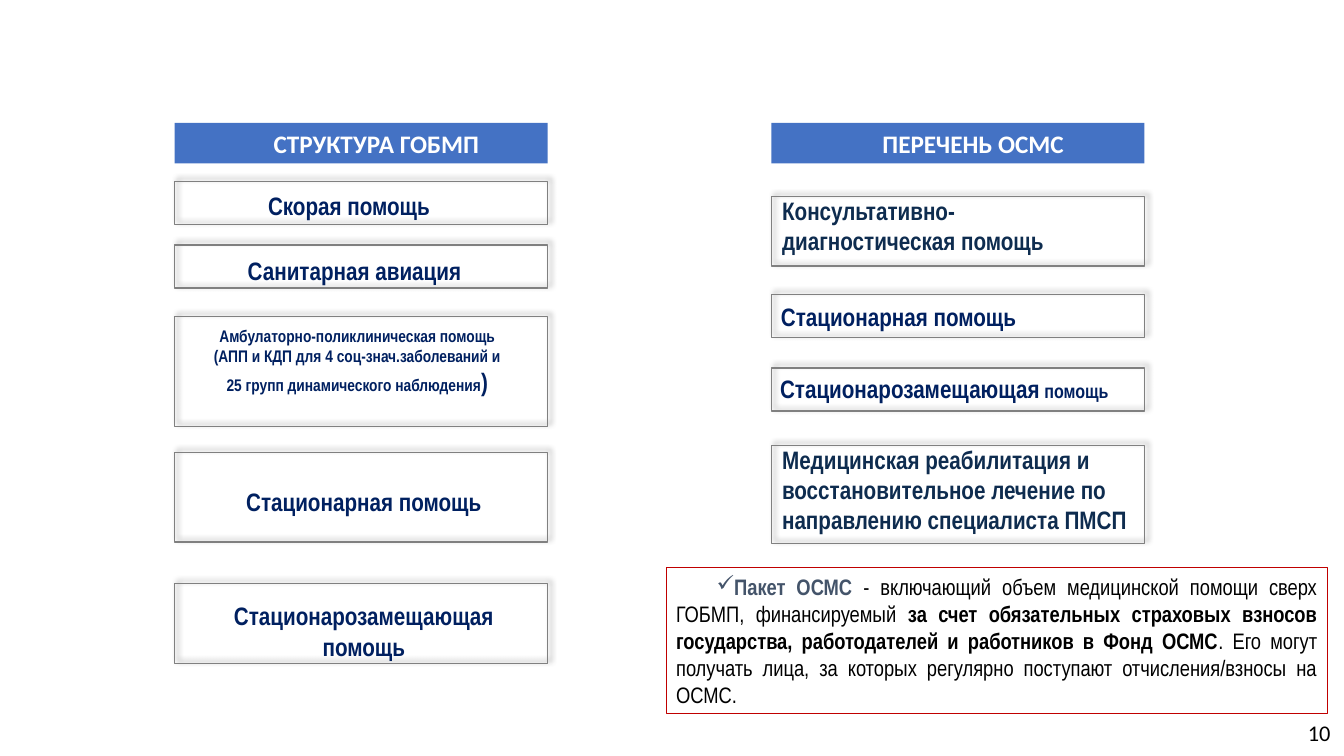
from lxml.etree import SubElement
from pptx import Presentation
from pptx.dml.color import RGBColor
from pptx.enum.shapes import MSO_SHAPE as Preset
from pptx.enum.text import MSO_ANCHOR as Anchor, PP_ALIGN as Align
from pptx.oxml.ns import qn
from pptx.util import Cm, Pt

NARROW, CALIBRI = "Arial Narrow", "Calibri"
NAVY, DARK_BLUE, SLATE = "002060", "0E2C4F", "44546A"
BLUE, GRAY, RED = "4472C4", "808080", "C00000"
BLACK, WHITE = "000000", "FFFFFF"

GOBMP_LEFT, OSMS_LEFT, CARD_WIDTH = 4.4, 19.44, 9.4

# Card top and height, label box, label paragraphs as (text, size) runs
GOBMP_CARDS = [
    (4.57, 1.09, (6.05, 4.67, 5.49, 1.02), [[("Скорая помощь", 18)]]),
    (6.17, 1.09, (5.94, 6.3, 5.99, 1.02), [[("Санитарная авиация", 18)]]),
    (7.98, 2.77, (5.08, 8.09, 7.85, 2.03), [
        [("Амбулаторно-поликлиническая помощь", 12)],
        [("(АПП и КДП для 4 соц-знач.заболеваний и 25 групп "
          "динамического наблюдения", 12), (")", 18)]]),
    (11.4, 2.26, (5.51, 12.12, 7.32, 1.02), [[("Стационарная помощь", 18)]]),
    (14.71, 2.01, (5.51, 15.01, 7.32, 1.78),
     [[("Стационарозамещающая помощь", 18)]]),
]
# The same, with alignment and colour of the label
OSMS_CARDS = [
    (4.95, 1.75, (19.46, 4.8, 8.26, 1.8),
     [[("Консультативно-диагностическая помощь", 18)]], Align.LEFT, DARK_BLUE),
    (7.42, 1.09, (19.43, 7.47, 6.68, 1.02),
     [[("Стационарная помощь", 18)]], Align.LEFT, NAVY),
    (9.27, 1.09, (18.95, 9.27, 9.7, 1.02),
     [[("Стационарозамещающая", 18), (" помощь", 14)]], Align.CENTER, NAVY),
    (11.23, 2.46, (19.46, 11.07, 10.01, 2.57),
     [[("Медицинская реабилитация и восстановительное лечение по "
        "направлению специалиста ПМСП", 18)]], Align.LEFT, DARK_BLUE),
]
OSMS_NOTE = [
    ("Пакет ОСМС ", True, SLATE),
    ("- включающий объем медицинской помощи сверх ГОБМП, финансируемый ",
     False, BLACK),
    ("за счет обязательных страховых взносов государства, работодателей "
     "и работников в Фонд ОСМС", True, BLACK),
    (". Его могут получать лица, за которых регулярно поступают "
     "отчисления/взносы на ОСМС.", False, BLACK),
]


def color(hex_code):
    return RGBColor.from_string(hex_code)


def style(font, name, size=None, hex_code=None, bold=None):
    font.name = name
    font.bold = bold
    if size:
        font.size = Pt(size)
    if hex_code:
        font.color.rgb = color(hex_code)


def add_rectangle(slide, box, fill=None, line=None, line_width=1):
    rectangle = slide.shapes.add_shape(Preset.RECTANGLE, *map(Cm, box))
    rectangle.shadow.inherit = False
    if fill:
        rectangle.fill.solid()
        rectangle.fill.fore_color.rgb = color(fill)
    else:
        rectangle.fill.background()
    if line:
        rectangle.line.color.rgb = color(line)
        rectangle.line.width = Pt(line_width)
    else:
        rectangle.line.fill.background()
    return rectangle


def add_soft_shadow(shape):
    """Cast a 40 % black shadow to the upper right."""
    effects = shape._element.spPr.find(qn("a:effectLst"))
    shadow = SubElement(effects, qn("a:outerShdw"), blurRad=str(Pt(4)),
                        dist=str(Pt(3)), dir=str(315 * 60000),
                        algn="bl", rotWithShape="0")
    tint = SubElement(shadow, qn("a:srgbClr"), val=BLACK)
    SubElement(tint, qn("a:alpha"), val="40000")


def add_label(slide, box, paragraphs, align=Align.CENTER, hex_code=NAVY,
              font_name=NARROW, bold=True):
    frame = slide.shapes.add_textbox(*map(Cm, box)).text_frame
    frame.word_wrap = True
    for index, runs in enumerate(paragraphs):
        paragraph = frame.add_paragraph() if index else frame.paragraphs[0]
        paragraph.alignment = align
        style(paragraph.font, font_name, hex_code=hex_code, bold=bold)
        for text, size in runs:
            run = paragraph.add_run()
            run.text = text
            run.font.size = Pt(size)
    return frame


def add_card(slide, left, top, height, label_box, paragraphs, *label_style):
    add_soft_shadow(
        add_rectangle(slide, (left, top, CARD_WIDTH, height), line=GRAY))
    add_label(slide, label_box, paragraphs, *label_style)


def add_header(slide, left, title):
    frame = add_rectangle(slide, (left, 3.1, CARD_WIDTH, 1.02),
                          fill=BLUE).text_frame
    frame.margin_left = Cm(1.02)
    frame.vertical_anchor = Anchor.MIDDLE
    heading = frame.paragraphs[0]
    heading.text = title
    heading.alignment = Align.CENTER
    style(heading.font, CALIBRI, 18, WHITE, True)


def add_note(slide, box, runs):
    frame = add_rectangle(slide, box, line=RED, line_width=0.75).text_frame
    frame.word_wrap = True
    frame.vertical_anchor = Anchor.MIDDLE
    paragraph = frame.paragraphs[0]
    paragraph.alignment = Align.JUSTIFY
    paragraph.space_after = Pt(6)
    properties = paragraph._p.get_or_add_pPr()
    properties.set("marL", "0")
    properties.set("indent", str(Cm(1.02)))
    SubElement(properties, qn("a:buChar"), char="✓")
    style(paragraph.font, NARROW, 16)
    for text, bold, hex_code in runs:
        run = paragraph.add_run()
        run.text = text
        run.font.bold = bold
        run.font.color.rgb = color(hex_code)


def main():
    deck = Presentation()
    deck.slide_width, deck.slide_height = Cm(33.87), Cm(19.05)
    slide = deck.slides.add_slide(deck.slide_layouts[6])

    add_header(slide, GOBMP_LEFT, "СТРУКТУРА ГОБМП")
    add_header(slide, OSMS_LEFT, "ПЕРЕЧЕНЬ ОСМС")
    for card in GOBMP_CARDS:
        add_card(slide, GOBMP_LEFT, *card)
    for card in OSMS_CARDS:
        add_card(slide, OSMS_LEFT, *card)
    add_note(slide, (16.79, 14.3, 16.66, 3.68), OSMS_NOTE)
    page_number = add_label(slide, (26.16, 17.96, 7.62, 1.02), [[("10", 16)]],
                            Align.RIGHT, BLACK, CALIBRI, False)
    page_number.vertical_anchor = Anchor.MIDDLE

    deck.save("out.pptx")


if __name__ == "__main__":
    main()
